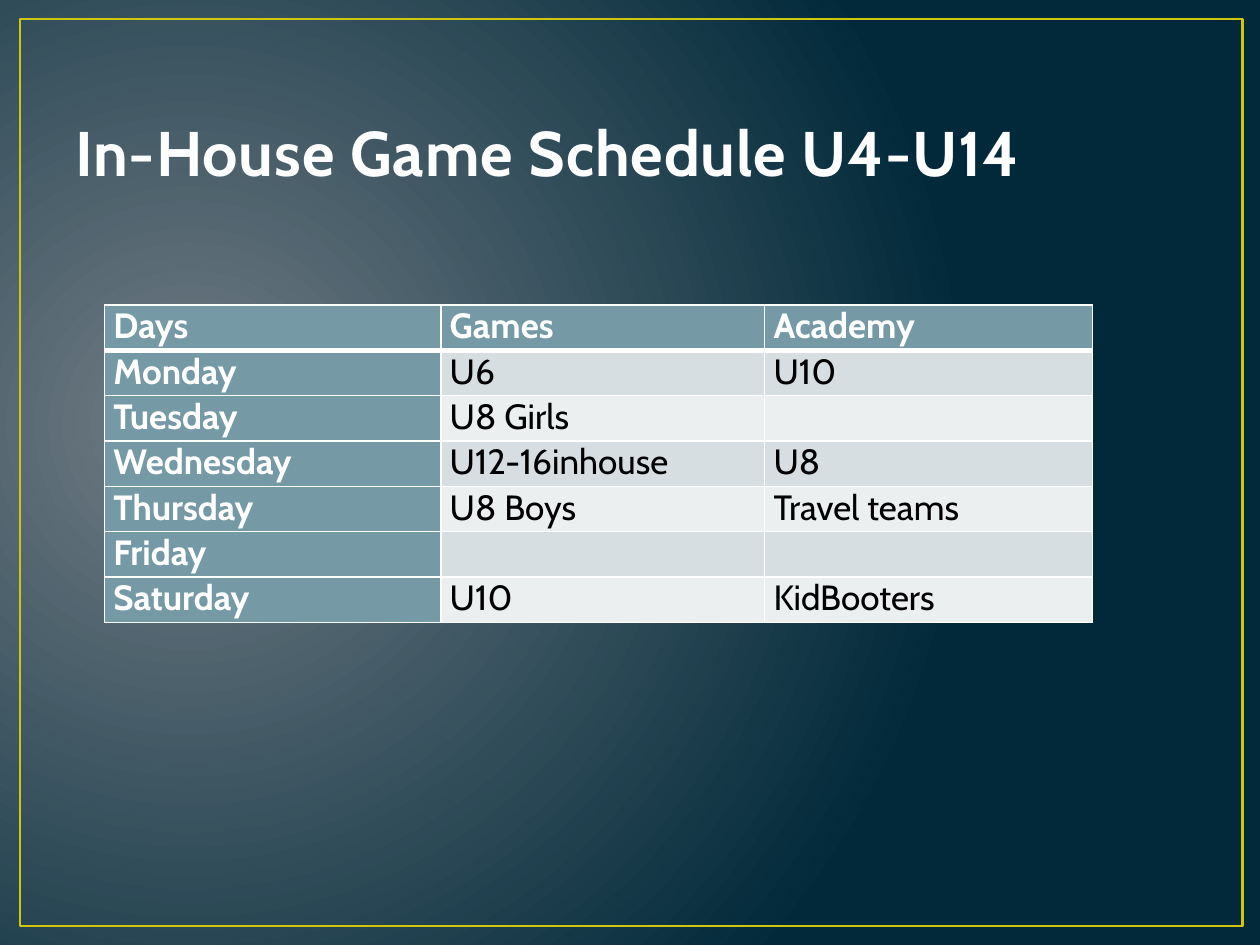
import pptx
import pptx.util
import pptx.dml.color
import pptx.enum.shapes
import pptx.enum.text
import pptx.oxml.ns
from lxml import etree

Inches, Pt = pptx.util.Inches, pptx.util.Pt
RGBColor = pptx.dml.color.RGBColor
qn = pptx.oxml.ns.qn

GLOW = RGBColor(0x71, 0x7C, 0x84)
NAVY = RGBColor(0x01, 0x29, 0x3A)
GOLD = RGBColor(0xCF, 0xC6, 0x0D)
OFF_WHITE = RGBColor(0xFE, 0xFE, 0xFE)
WHITE = RGBColor(0xFF, 0xFF, 0xFF)
BLACK = RGBColor(0, 0, 0)
TEAL = RGBColor(0x75, 0x9A, 0xA5)
BANDS = [RGBColor(0xD6, 0xDE, 0xE1), RGBColor(0xEC, 0xEF, 0xF0)]

SCHEDULE = [
    ("Days", "Games", "Academy"),
    ("Monday", "U6", "U10"),
    ("Tuesday", "U8 Girls", ""),
    ("Wednesday", "U12-16inhouse", "U8"),
    ("Thursday", "U8 Boys", "Travel teams"),
    ("Friday", "", ""),
    ("Saturday", "U10", "KidBooters"),
]


def set_attributes(target, values):
    for name, value in values.items():
        setattr(target, name, value)


class SlideBuilder:
    font_name = "Cabin"

    def __init__(self, slide):
        self.slide = slide

    def styled_run(self, paragraph, text, size, color, bold):
        run = paragraph.add_run()
        run.text = text
        set_attributes(run.font, {"name": self.font_name, "size": Pt(size), "bold": bold})
        run.font.color.rgb = color
        return run

    def background(self, inner, outer, focus):
        fill = self.slide.background.fill
        fill.gradient()
        for stop, color, position in zip(fill.gradient_stops, (inner, outer), (0, 1)):
            stop.color.rgb = color
            stop.position = position
        # Turn the linear gradient into a radial one
        gradient = self.slide.element.find(".//" + qn("a:gradFill"))
        gradient.remove(gradient.find(qn("a:lin")))
        circle = etree.SubElement(gradient, qn("a:path"), {"path": "circle"})
        edges = {side: str(percent * 1000) for side, percent in zip("ltrb", focus)}
        etree.SubElement(circle, qn("a:fillToRect"), edges)

    def frame(self, left, top, width, height, color, weight):
        border = self.slide.shapes.add_shape(
            pptx.enum.shapes.MSO_SHAPE.RECTANGLE,
            Inches(left), Inches(top), Inches(width), Inches(height))
        border.shadow.inherit = False
        border.fill.background()
        border.line.color.rgb = color
        border.line.width = Pt(weight)

    def title(self, text, left, top, width, height):
        heading = self.slide.shapes.add_textbox(
            Inches(left), Inches(top), Inches(width), Inches(height)).text_frame
        set_attributes(heading, {
            "word_wrap": True,
            "vertical_anchor": pptx.enum.text.MSO_ANCHOR.BOTTOM,
        })
        run = self.styled_run(heading.paragraphs[0], text, 36, OFF_WHITE, True)
        run.font._element.set("spc", "50")

    def cell_borders(self, cell, widths):
        properties = cell._tc.get_or_add_tcPr()
        for position, (side, width) in enumerate(widths.items()):
            line = etree.Element(qn("a:ln" + side), {"w": str(Pt(width))})
            solid = etree.SubElement(line, qn("a:solidFill"))
            etree.SubElement(solid, qn("a:srgbClr"), {"val": str(WHITE)})
            properties.insert(position, line)

    def table(self, rows, left, top, column_widths, row_height):
        grid = self.slide.shapes.add_table(
            len(rows), len(column_widths), Inches(left), Inches(top),
            Inches(sum(column_widths)), Inches(row_height * len(rows))).table
        for column, width in zip(grid.columns, column_widths):
            column.width = Inches(width)
        margins = {"margin_left": Inches(0.07), "margin_right": Inches(0.07),
                   "margin_top": 0, "margin_bottom": 0}
        for r, row in enumerate(rows):
            grid.rows[r].height = Inches(row_height)
            for c, text in enumerate(row):
                cell = grid.cell(r, c)
                is_header = r == 0 or c == 0
                set_attributes(cell, margins)
                cell.fill.solid()
                cell.fill.fore_color.rgb = TEAL if is_header else BANDS[(r - 1) % 2]
                # A thick rule separates the heading row from the days
                self.cell_borders(cell, {"L": 1, "R": 1, "T": 3 if r == 1 else 1,
                                         "B": 3 if r == 0 else 1})
                if text:
                    self.styled_run(cell.text_frame.paragraphs[0], text, 20,
                                    WHITE if is_header else BLACK, is_header)


def main():
    deck = pptx.Presentation()
    set_attributes(deck, {"slide_width": Inches(10), "slide_height": Inches(7.5)})
    builder = SlideBuilder(deck.slides.add_slide(deck.slide_layouts[6]))

    # Backdrop and frame
    builder.background(GLOW, NAVY, (15, 50, 85, 60))
    builder.frame(0.16, 0.15, 9.7, 7.2, GOLD, 1.5)

    # Title
    builder.title("In-House Game Schedule U4-U14", 0.5, 0.3, 9, 1.25)

    # Weekly schedule
    builder.table(SCHEDULE, 0.83, 2.42, (2.67, 2.57, 2.6), 0.36)

    deck.save("out.pptx")


if __name__ == "__main__":
    main()
